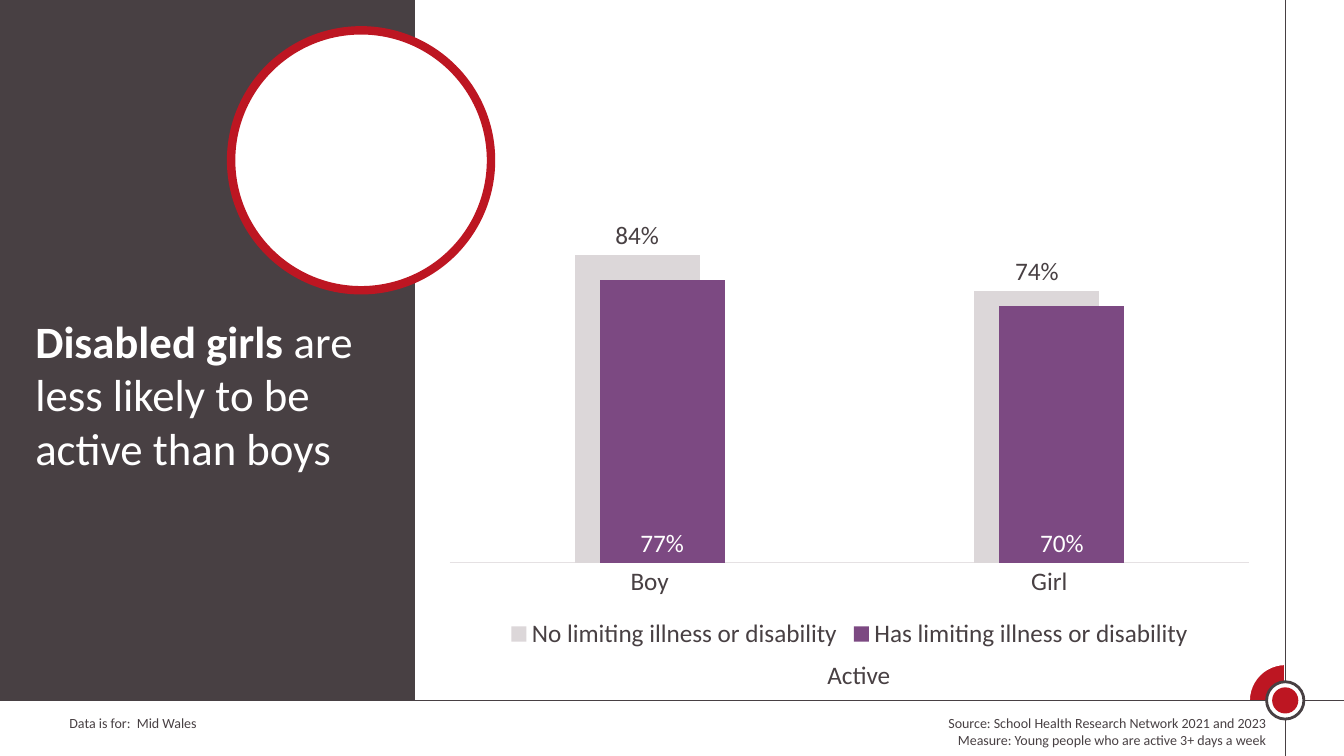
from lxml import etree
from pptx import Presentation
from pptx.chart.data import CategoryChartData
from pptx.dml.color import RGBColor
from pptx.enum.chart import XL_CHART_TYPE as CHART
from pptx.enum.chart import XL_LABEL_POSITION as LABEL_POS
from pptx.enum.chart import XL_LEGEND_POSITION as LEGEND_POS
from pptx.enum.chart import XL_TICK_MARK as TICK
from pptx.enum.shapes import MSO_CONNECTOR as CONNECTOR
from pptx.enum.shapes import MSO_SHAPE as SHAPE
from pptx.enum.text import PP_ALIGN as ALIGN
from pptx.oxml.ns import qn
from pptx.util import Cm, Pt

COLORS = {
    "dark": "484043",
    "red": "BD1622",
    "white": "FFFFFF",
    "grey": "DCD7D9",
    "purple": "7C4982",
    "axis": "E5E1E3",
}
FONT = "Calibri"
WIDTH, HEIGHT = 33.87, 19.05
RULE_X, RULE_Y = 32.39, 17.65  # where the two thin rules cross


def rgb(name):
    return RGBColor.from_string(COLORS[name])


def style_font(font, size, color="dark"):
    font.name = FONT
    font.size = Pt(size)
    font.color.rgb = rgb(color)


def add_shape(slide, kind, x, y, w, h, fill, line=None, weight=0):
    sp = slide.shapes.add_shape(kind, Cm(x), Cm(y), Cm(w), Cm(h))
    sp.shadow.inherit = False
    sp.fill.solid()
    sp.fill.fore_color.rgb = rgb(fill)
    if line:
        sp.line.color.rgb = rgb(line)
        sp.line.width = Pt(weight)
    else:
        sp.line.fill.background()
    return sp


def add_centred(slide, kind, cx, cy, size, fill, line=None, weight=0):
    return add_shape(slide, kind, cx - size / 2, cy - size / 2, size, size,
                     fill, line, weight)


def add_rule(slide, x1, y1, x2, y2):
    rule = slide.shapes.add_connector(CONNECTOR.STRAIGHT,
                                      Cm(x1), Cm(y1), Cm(x2), Cm(y2))
    rule.line.color.rgb = rgb("dark")
    rule.line.width = Pt(1)
    etree.SubElement(rule._element.spPr, qn("a:effectLst"))


def add_text(slide, x, y, w, h, paragraphs, size, color="dark", align=ALIGN.LEFT):
    """Each paragraph is a list of (text, bold) runs."""
    tf = slide.shapes.add_textbox(Cm(x), Cm(y), Cm(w), Cm(h)).text_frame
    tf.word_wrap = True
    for i, runs in enumerate(paragraphs):
        p = tf.add_paragraph() if i else tf.paragraphs[0]
        p.alignment = align
        style_font(p.font, size, color)
        for text, bold in runs:
            r = p.add_run()
            r.text = text
            r.font.bold = bold


def style_series(series, fill, label_color, position):
    series.format.fill.solid()
    series.format.fill.fore_color.rgb = rgb(fill)
    labels = series.data_labels
    labels.show_value = True
    labels.number_format = "0%"
    labels.number_format_is_linked = False
    labels.position = position
    style_font(labels.font, 18, label_color)


def add_activity_chart(slide, x, y, w, h):
    data = CategoryChartData(number_format="0%")
    data.categories = ["Boy", "Girl"]
    data.add_series("No limiting illness or disability", (0.84, 0.74))
    data.add_series("Has limiting illness or disability", (0.77, 0.70))
    chart = slide.shapes.add_chart(CHART.COLUMN_CLUSTERED,
                                   Cm(x), Cm(y), Cm(w), Cm(h), data).chart
    style_font(chart.font, 16)
    chart.has_title = False

    # Legend
    chart.has_legend = True
    chart.legend.position = LEGEND_POS.BOTTOM
    chart.legend.include_in_layout = False
    style_font(chart.legend.font, 18)

    # Axes
    cats = chart.category_axis
    cats.major_tick_mark = cats.minor_tick_mark = TICK.NONE
    cats.format.line.color.rgb = rgb("axis")
    cats.format.line.width = Pt(0.75)
    style_font(cats.tick_labels.font, 18)
    values = chart.value_axis
    values.minimum_scale, values.maximum_scale = 0, 1
    values.has_major_gridlines = False
    values.visible = False

    # Columns
    plot = chart.plots[0]
    plot.gap_width, plot.overlap = 200, 80
    plot.vary_by_categories = False
    without, limited = plot.series
    style_series(without, "grey", "dark", LABEL_POS.OUTSIDE_END)
    style_series(limited, "purple", "white", LABEL_POS.INSIDE_BASE)


def add_corner_mark(slide):
    pie = add_centred(slide, SHAPE.PIE, RULE_X, RULE_Y, 1.83, "red", "white", 1.5)
    pie.adjustments[0], pie.adjustments[1] = 106.62, 162
    add_rule(slide, RULE_X, 0, RULE_X, HEIGHT)
    add_rule(slide, 0, RULE_Y, WIDTH, RULE_Y)
    add_centred(slide, SHAPE.OVAL, RULE_X, RULE_Y, 0.94, "white", "dark", 2)
    add_centred(slide, SHAPE.OVAL, RULE_X, RULE_Y, 0.66, "red")


def main():
    prs = Presentation()
    prs.slide_width, prs.slide_height = Cm(WIDTH), Cm(HEIGHT)
    slide = prs.slides.add_slide(prs.slide_layouts[6])

    # Frame and side panel
    add_corner_mark(slide)
    add_shape(slide, SHAPE.RECTANGLE, 0, 0, 10.46, RULE_Y, "dark")
    add_centred(slide, SHAPE.OVAL, 9.1, 4.04, 6.55, "white", "red", 6)

    # Footer
    add_text(slide, 1.5, 17.88, 11.15, 0.69,
             [[("Data is for:  Mid Wales", False)]], 10)
    add_text(slide, 15.72, 17.88, 16.43, 1.12,
             [[("Source: School Health Research Network 2021 and 2023", False)],
              [("Measure: Young people who are active 3+ days a week", False)]],
             10, align=ALIGN.RIGHT)

    # Headline
    add_text(slide, 0.64, 7.77, 8.71, 5.74,
             [[("Disabled girls", True),
               (" are less likely to be active than boys", False)]], 32, "white")

    # Chart and its caption
    add_text(slide, 20.6, 16.48, 3.1, 1.02, [[("Active", False)]], 18)
    add_activity_chart(slide, 10.92, 4.7, 20.98, 11.79)

    prs.save("out.pptx")


if __name__ == "__main__":
    main()
